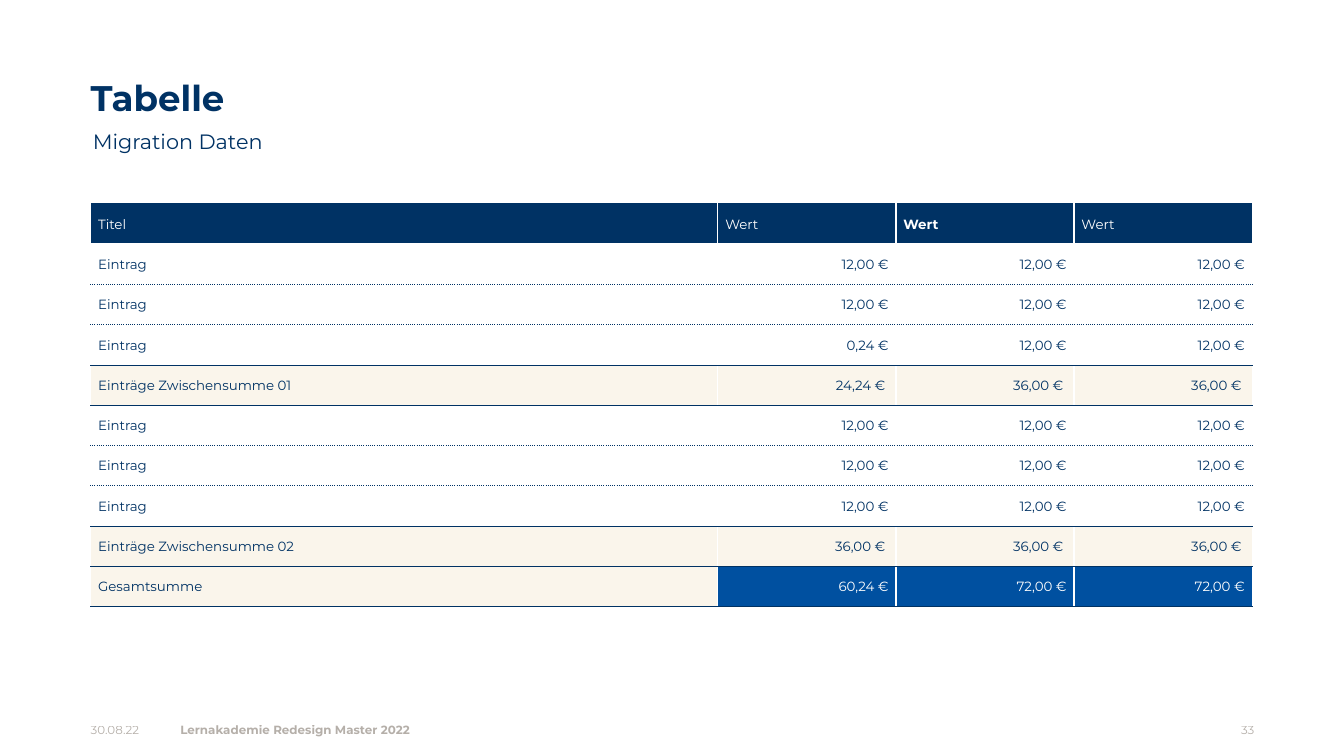
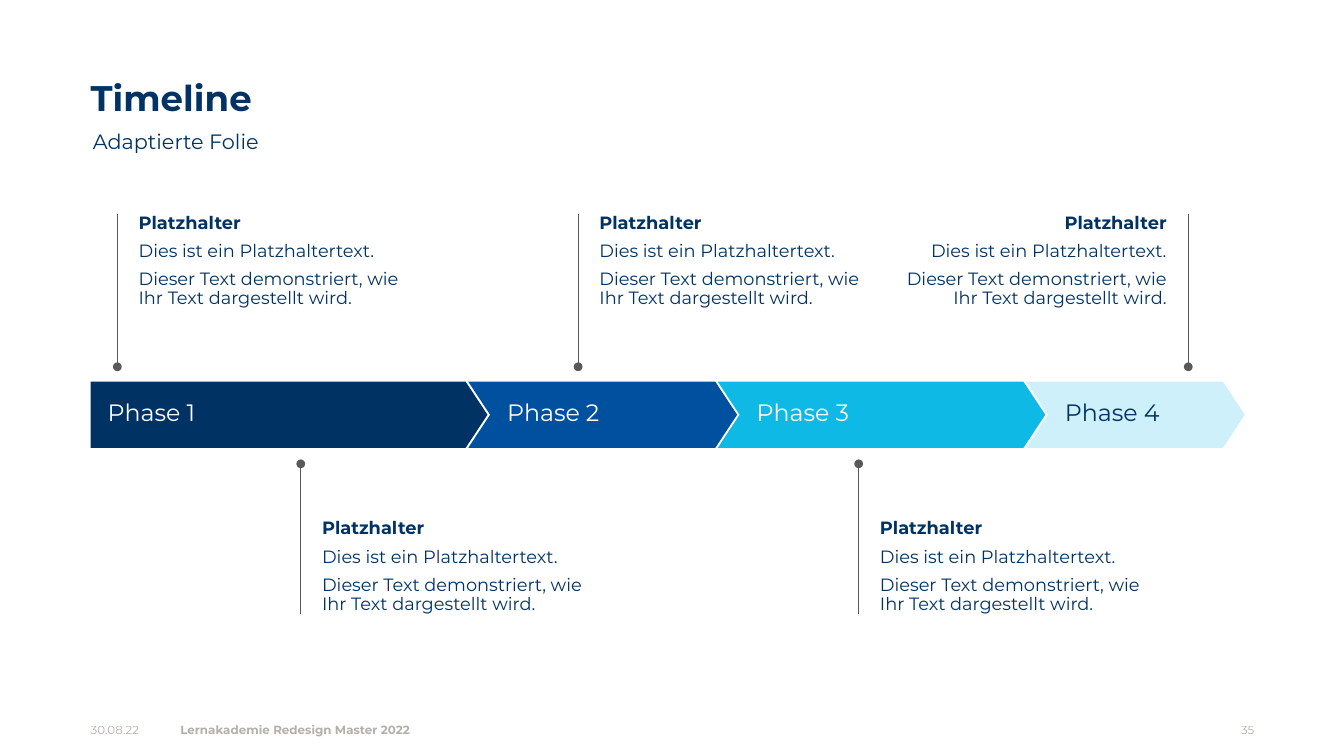
from dataclasses import dataclass

import lxml.etree
import pptx
import pptx.dml.color
import pptx.enum.dml
import pptx.enum.shapes
import pptx.enum.text
import pptx.oxml.ns
import pptx.util

ALIGN = pptx.enum.text.PP_ALIGN
ANCHOR = pptx.enum.text.MSO_ANCHOR
SHAPE = pptx.enum.shapes.MSO_SHAPE
qn = pptx.oxml.ns.qn

# 100 px to the inch
EMU_PER_PX = 9144


@dataclass(frozen=True)
class Theme:
    font: str = "Montserrat"
    navy: str = "003264"
    blue: str = "0050A0"
    cyan: str = "0FB9E6"
    pale: str = "CDF0FA"
    cream: str = "FAF5EB"
    white: str = "FFFFFF"
    brown: str = "463728"
    gray: str = "595959"
    title_size: int = 24
    subtitle_size: int = 14
    phase_size: int = 16
    body_size: int = 12
    table_size: int = 9
    footer_size: int = 8
    footer_opacity: int = 40
    left: int = 85
    hairline: float = 0.5


THEME = Theme()


def px(length):
    return pptx.util.Emu(length * EMU_PER_PX)


def rgb(color):
    return pptx.dml.color.RGBColor.from_string(color)


# Text

def write(paragraph, text, *, size, color=THEME.navy, bold=False, opacity=100,
          align=ALIGN.LEFT, line_spacing=None, before=0, after=0):
    paragraph.alignment = align
    paragraph.line_spacing = line_spacing
    paragraph.space_before = pptx.util.Pt(before)
    paragraph.space_after = pptx.util.Pt(after)
    run = paragraph.add_run()
    run.text = text
    run.font.name = THEME.font
    run.font.size = pptx.util.Pt(size)
    run.font.bold = bold
    run.font.color.rgb = rgb(color)
    if opacity < 100:
        color_element = run._r.find(".//" + qn("a:srgbClr"))
        lxml.etree.SubElement(color_element, qn("a:alpha"), val=str(opacity * 1000))


def set_frame(frame, insets=(0, 0, 0, 0), anchor=ANCHOR.TOP):
    frame.word_wrap = True
    frame.vertical_anchor = anchor
    (frame.margin_left, frame.margin_top,
     frame.margin_right, frame.margin_bottom) = map(px, insets)
    return frame


def add_text_frame(slide, left, top, width, height, **frame_format):
    box = slide.shapes.add_textbox(*map(px, (left, top, width, height)))
    return set_frame(box.text_frame, **frame_format)


# Parts shared by the slides

def add_footer(slide, number):
    items = [
        ("30.08.22", THEME.left, 85, False, ALIGN.LEFT),
        ("Lernakademie Redesign Master 2022", 169, 445, True, ALIGN.LEFT),
        (str(number), 1091, 85, False, ALIGN.RIGHT),
    ]
    for text, left, width, bold, align in items:
        frame = add_text_frame(slide, left, 661, width, 47, anchor=ANCHOR.MIDDLE)
        write(frame.paragraphs[0], text, size=THEME.footer_size, color=THEME.brown,
              opacity=THEME.footer_opacity, bold=bold, align=align)


def add_slide(presentation, title, subtitle, number):
    slide = presentation.slides.add_slide(presentation.slide_layouts[5])
    placeholder = slide.shapes.title
    placeholder.left, placeholder.top = px(THEME.left), px(71)
    placeholder.width, placeholder.height = px(803), px(40)
    frame = set_frame(placeholder.text_frame)
    frame.auto_size = pptx.enum.text.MSO_AUTO_SIZE.SHAPE_TO_FIT_TEXT
    write(frame.paragraphs[0], title, size=THEME.title_size, bold=True)

    frame = add_text_frame(slide, THEME.left, 111, 803, 39,
                           insets=(2, 0, 0, 0), anchor=ANCHOR.MIDDLE)
    write(frame.paragraphs[0], subtitle, size=THEME.subtitle_size,
          line_spacing=pptx.util.Pt(20), after=10)
    add_footer(slide, number)
    return slide


# Table

WHITE_RULE = (THEME.white, 1, "solid")
SOLID_RULE = (THEME.navy, THEME.hairline, "solid")
DOTTED_RULE = (THEME.navy, THEME.hairline, "sysDot")


def set_borders(cell, **rules):
    properties = cell._tc.get_or_add_tcPr()
    for position, (side, (color, width, dash)) in enumerate(rules.items()):
        line = lxml.etree.Element(qn("a:ln" + side), w=str(pptx.util.Pt(width)))
        fill = lxml.etree.SubElement(line, qn("a:solidFill"))
        lxml.etree.SubElement(fill, qn("a:srgbClr"), val=color)
        lxml.etree.SubElement(line, qn("a:prstDash"), val=dash)
        properties.insert(position, line)


def rule_below(kinds, index):
    if kinds[index] == "header":
        return WHITE_RULE
    both_entries = kinds[index:index + 2] == ["entry", "entry"]
    return DOTTED_RULE if both_entries else SOLID_RULE


def fill_cell(cell, text, kind, column):
    is_value = column > 0
    fill = {"header": THEME.navy, "entry": THEME.white, "subtotal": THEME.cream,
            "total": THEME.blue if is_value else THEME.cream}[kind]
    cell.fill.solid()
    cell.fill.fore_color.rgb = rgb(fill)
    cell.vertical_anchor = ANCHOR.MIDDLE
    right_aligned = is_value and kind != "header"
    value_inset = 10 if kind == "subtotal" else 7
    cell.margin_left = px(1 if right_aligned else 7)
    cell.margin_right = px(value_inset if right_aligned else 1)
    cell.margin_top, cell.margin_bottom = px(1), px(0)
    write(cell.text_frame.paragraphs[0], text, size=THEME.table_size,
          color=THEME.white if fill in (THEME.navy, THEME.blue) else THEME.navy,
          bold=kind == "header" and column == 2,
          align=ALIGN.RIGHT if right_aligned else ALIGN.LEFT)


def add_sum_table(slide, rows):
    widths = [588, 167, 167, 167]
    height = px(378)
    table = slide.shapes.add_table(len(rows), len(widths), px(THEME.left), px(191),
                                   px(sum(widths)), height).table
    table.first_row = table.horz_banding = False
    for column, width in zip(table.columns, widths):
        column.width = px(width)
    kinds = [kind for kind, *texts in rows]
    above = SOLID_RULE
    for index, (kind, *texts) in enumerate(rows):
        table.rows[index].height = height // len(rows)
        below = rule_below(kinds, index)
        for column, text in enumerate(texts):
            cell = table.cell(index, column)
            fill_cell(cell, text, kind, column)
            set_borders(cell, L=WHITE_RULE, R=WHITE_RULE, T=above, B=below)
        above = below


def build_table_slide(presentation):
    slide = add_slide(presentation, "Tabelle", "Migration Daten", 33)
    entry = ("entry", "Eintrag", "12,00 €", "12,00 €", "12,00 €")
    add_sum_table(slide, [
        ("header", "Titel", "Wert", "Wert", "Wert"),
        entry,
        entry,
        ("entry", "Eintrag", "0,24 €", "12,00 €", "12,00 €"),
        ("subtotal", "Einträge Zwischensumme 01", "24,24 €", "36,00 €", "36,00 €"),
        entry,
        entry,
        entry,
        ("subtotal", "Einträge Zwischensumme 02", "36,00 €", "36,00 €", "36,00 €"),
        ("total", "Gesamtsumme", "60,24 €", "72,00 €", "72,00 €"),
    ])


# Timeline

def add_phase(slide, name, left, width, kind, fill, color):
    shape = slide.shapes.add_shape(kind, px(left), px(358), px(width), px(62))
    shape.shadow.inherit = False
    shape.adjustments[0] = 0.33
    shape.fill.solid()
    shape.fill.fore_color.rgb = rgb(fill)
    shape.line.fill.background()
    frame = set_frame(shape.text_frame, insets=(16, 0, 10, 0), anchor=ANCHOR.MIDDLE)
    write(frame.paragraphs[0], name, size=THEME.phase_size, color=color,
          line_spacing=0.8)


def add_pin(slide, x, start, end):
    pin = slide.shapes.add_connector(pptx.enum.shapes.MSO_CONNECTOR.STRAIGHT,
                                     px(x), px(start), px(x), px(end))
    pin.line.color.rgb = rgb(THEME.gray)
    pin.line.width = pptx.util.Pt(THEME.hairline)
    lxml.etree.SubElement(pin.line._get_or_add_ln(), qn("a:headEnd"), type="oval")
    lxml.etree.SubElement(pin._element.spPr, qn("a:effectLst"))


def add_callout(slide, x, above, text_on_left=False):
    width, height, gap = 266, 116, 20
    if above:
        add_pin(slide, x, 344, 201)
        top, anchor = 201, ANCHOR.TOP
    else:
        add_pin(slide, x, 435, 576)
        top, anchor = 576 - height, ANCHOR.BOTTOM
    left, insets, align = x, (gap, 0, 0, 0), ALIGN.LEFT
    if text_on_left:
        left, insets, align = x - width, (0, 0, gap, 0), ALIGN.RIGHT
    frame = add_text_frame(slide, left, top, width, height,
                           insets=insets, anchor=anchor)
    texts = ["Platzhalter", "Dies ist ein Platzhaltertext.",
             "Dieser Text demonstriert, wie Ihr Text dargestellt wird."]
    for index, text in enumerate(texts):
        paragraph = frame.add_paragraph() if index else frame.paragraphs[0]
        write(paragraph, text, size=THEME.body_size, bold=index == 0, align=align,
              line_spacing=0.9, before=6 if index else 0)


def build_timeline_slide(presentation):
    slide = add_slide(presentation, "Timeline", "Adaptierte Folie", 35)
    phases = [
        ("Phase 1", 372, SHAPE.PENTAGON, THEME.navy, THEME.white),
        ("Phase 2", 252, SHAPE.CHEVRON, THEME.blue, THEME.white),
        ("Phase 3", 307, SHAPE.CHEVRON, THEME.cyan, THEME.white),
        ("Phase 4", 205, SHAPE.CHEVRON, THEME.pale, THEME.navy),
    ]
    left, overlap = THEME.left, 18
    for name, width, kind, fill, color in phases:
        add_phase(slide, name, left, width, kind, fill, color)
        left += width - overlap

    add_callout(slide, 110, above=True)
    add_callout(slide, 542, above=True)
    add_callout(slide, 1114, above=True, text_on_left=True)
    add_callout(slide, 282, above=False)
    add_callout(slide, 805, above=False)


def main():
    presentation = pptx.Presentation()
    presentation.slide_width, presentation.slide_height = px(1260), px(709)
    build_table_slide(presentation)
    build_timeline_slide(presentation)
    presentation.save("out.pptx")


if __name__ == "__main__":
    main()
